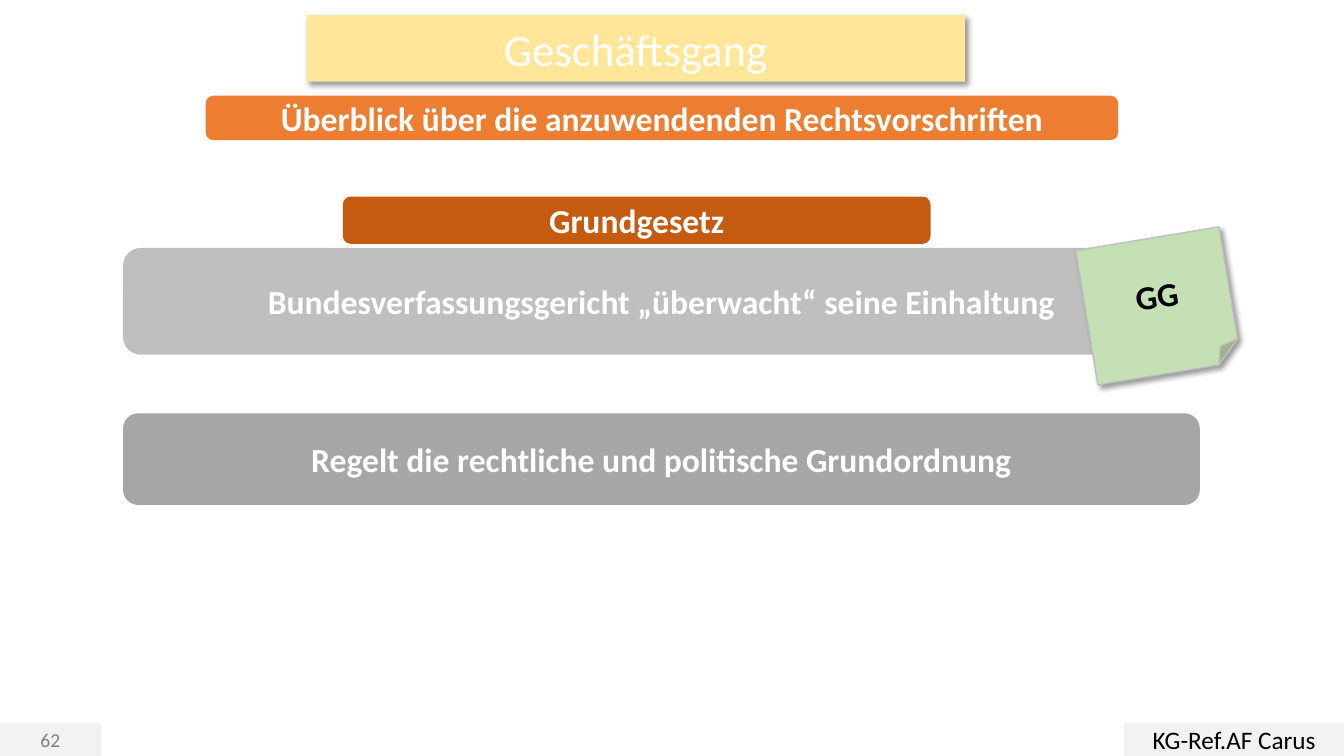
"""Build the slide on the Grundgesetz within the Geschäftsgang series."""
from dataclasses import dataclass
from typing import Any, Optional

from lxml import etree
from pptx import Presentation
from pptx import util as u
from pptx.dml.color import RGBColor
from pptx.enum import shapes, text
from pptx.oxml import ns

COLORS = {
    "white": "FFFFFF",
    "black": "000000",
    "cream": "FFE699",
    "orange": "ED7D31",
    "rust": "C55A11",
    "silver": "BFBFBF",
    "grey": "A6A6A6",
    "footer": "F2F2F2",
    "number": "808080",
    "green": "C5E0B4",
}
SHADOW = {"blurRad": "50800", "dist": "38100", "dir": "2700000", "algn": "tl", "rotWithShape": "0"}
FRAME_FORMAT = {"word_wrap": True, "vertical_anchor": text.MSO_ANCHOR.MIDDLE}
ROUNDED = shapes.MSO_SHAPE.ROUNDED_RECTANGLE
RECTANGLE = shapes.MSO_SHAPE.RECTANGLE


@dataclass(frozen=True)
class Panel:
    """A filled shape with one centred line of text."""

    label: str
    left: float
    top: float
    width: float
    height: float
    fill: str
    kind: shapes.MSO_SHAPE = ROUNDED
    size: int = 24
    bold: bool = True
    color: str = "white"
    line: Optional[str] = None
    shadow: bool = False
    rotation: float = 0


TITLE = Panel("Geschäftsgang", 3.04, 0.15, 6.53, 0.66, "cream", size=32, bold=False, shadow=True)
PANELS = (
    Panel("Grundgesetz", 3.4, 1.95, 5.83, 0.47, "rust"),
    Panel("62", 0, 7.18, 1, 0.32, "footer", RECTANGLE, 14, False, "number", "footer"),
    Panel("KG-Ref.AF Carus", 11.15, 7.17, 2.18, 0.33, "footer", RECTANGLE, 18, False, "black"),
    Panel("Überblick über die anzuwendenden Rechtsvorschriften", 2.04, 0.95, 9.05, 0.44, "orange"),
    Panel("Bundesverfassungsgericht „überwacht“ seine Einhaltung", 1.22, 2.46, 10.68, 1.06, "silver"),
    Panel("Regelt die rechtliche und politische Grundordnung", 1.22, 4.1, 10.68, 0.91, "grey"),
    Panel("GG", 10.77, 2.36, 1.44, 1.35, "green", shapes.MSO_SHAPE.FOLDED_CORNER,
          color="black", line="silver", shadow=True, rotation=350.6),
)


def rgb(name: str) -> RGBColor:
    """Return the named colour."""
    return RGBColor.from_string(COLORS[name])


def apply(target: Any, values: dict[str, Any]) -> None:
    """Set every given attribute on the target."""
    for name, value in values.items():
        setattr(target, name, value)


def box(panel: Panel) -> dict[str, u.Length]:
    """Return the position and size of a panel."""
    return {name: u.Inches(getattr(panel, name)) for name in ("left", "top", "width", "height")}


def add_shadow(shape: Any) -> None:
    """Give the shape a soft shadow to the lower right."""
    effects = shape._element.spPr.find(ns.qn("a:effectLst"))
    outer = etree.SubElement(effects, ns.qn("a:outerShdw"), SHADOW)
    color = etree.SubElement(outer, ns.qn("a:srgbClr"), {"val": COLORS["black"]})
    etree.SubElement(color, ns.qn("a:alpha"), {"val": "40000"})


def format_panel(shape: Any, panel: Panel) -> None:
    """Apply fill, outline, shadow and text of a panel."""
    shape.fill.solid()
    shape.fill.fore_color.rgb = rgb(panel.fill)
    if panel.line:
        shape.line.color.rgb = rgb(panel.line)
        shape.line.width = u.Pt(1)
    else:
        shape.line.fill.background()
    shape.shadow.inherit = False
    if panel.shadow:
        add_shadow(shape)
    shape.rotation = panel.rotation
    apply(shape.text_frame, FRAME_FORMAT)
    paragraph = shape.text_frame.paragraphs[0]
    paragraph.alignment = text.PP_ALIGN.CENTER
    run = paragraph.add_run()
    run.text = panel.label
    apply(run.font, {"name": "Calibri", "size": u.Pt(panel.size), "bold": panel.bold})
    run.font.color.rgb = rgb(panel.color)


def place_title(slide: Any, panel: Panel) -> None:
    """Turn the title placeholder into a rounded banner."""
    title = slide.shapes.title
    apply(title, box(panel))
    geometry = etree.Element(ns.qn("a:prstGeom"), {"prst": "roundRect"})
    etree.SubElement(geometry, ns.qn("a:avLst"))
    title._element.spPr.insert(1, geometry)
    format_panel(title, panel)


def add_panel(slide: Any, panel: Panel) -> None:
    """Draw one panel on the slide."""
    format_panel(slide.shapes.add_shape(panel.kind, *box(panel).values()), panel)


def main() -> None:
    """Create and save the presentation."""
    presentation = Presentation()
    apply(presentation, {"slide_width": u.Inches(13.33), "slide_height": u.Inches(7.5)})
    slide = presentation.slides.add_slide(presentation.slide_layouts[5])
    place_title(slide, TITLE)
    for panel in PANELS:
        add_panel(slide, panel)
    presentation.save("out.pptx")


if __name__ == "__main__":
    main()
